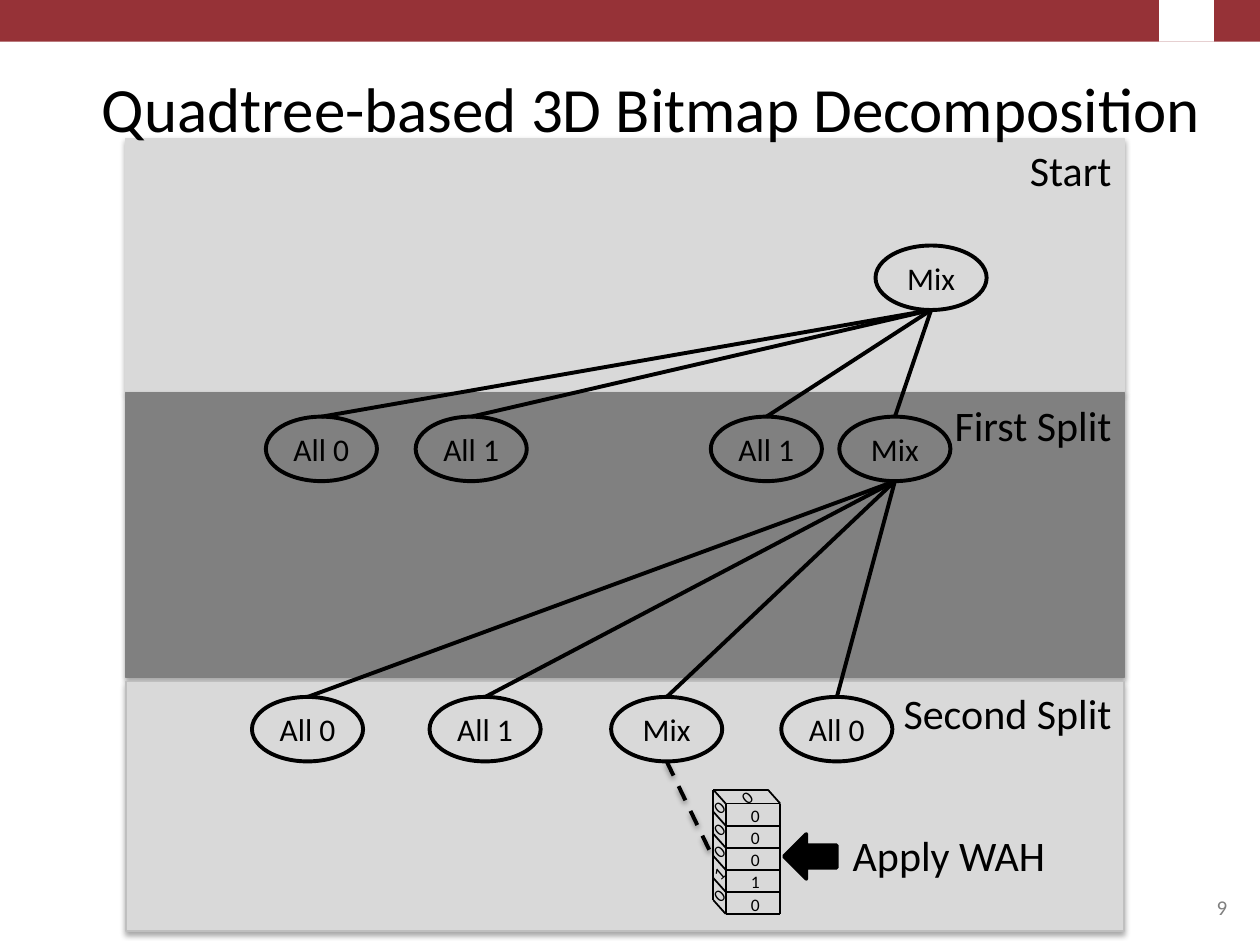
"""Build a slide showing the quadtree decomposition of a 3D bitmap."""
import lxml.etree
import pptx
import pptx.dml.color
import pptx.enum.dml
import pptx.enum.shapes
import pptx.enum.text
import pptx.oxml.ns
import pptx.util

Cm, Pt = pptx.util.Cm, pptx.util.Pt
Shape = pptx.enum.shapes.MSO_SHAPE
Align = pptx.enum.text.PP_ALIGN
Anchor = pptx.enum.text.MSO_ANCHOR
qn = pptx.oxml.ns.qn

NODE_WIDTH, NODE_HEIGHT = 2.24, 1.3
PANEL_LEFT, PANEL_WIDTH = 2.54, 20.12
LEVELS = [
    ("Start", 2.79, 5.11, "D9D9D9", "D9D9D9", 4.95, [(17.65, "Mix")]),
    ("First Split", 7.92, 5.74, "808080", "808080", 8.4,
     [(5.36, "All 0"), (8.38, "All 1"), (14.33, "All 1"), (16.92, "Mix")]),
    ("Second Split", 13.74, 5.03, "D9D9D9", "BFBFBF", 14.05,
     [(5.08, "All 0"), (8.66, "All 1"), (12.32, "Mix"), (15.75, "All 0")]),
]
BITS = "00010"


def color(value):
    return pptx.dml.color.RGBColor.from_string(value)


class Painter:
    def __init__(self, page, font="Calibri", ink="000000"):
        self.page, self.font, self.ink = page, font, ink

    def label(self, frame, text, size, align, anchor, ink=None):
        frame.vertical_anchor = anchor
        para = frame.paragraphs[0]
        para.text = text
        para.alignment = align
        para.font.name = self.font
        para.font.size = Pt(size)
        para.font.color.rgb = color(ink or self.ink)

    def title(self, text, left, top, width, height):
        title = self.page.shapes.title
        title.left, title.top = Cm(left), Cm(top)
        title.width, title.height = Cm(width), Cm(height)
        self.label(title.text_frame, text, 36, Align.CENTER, Anchor.BOTTOM)
        title.element.getparent().append(title.element)

    def text(self, text, left, top, width, height, size, align=Align.LEFT,
             anchor=Anchor.TOP, ink=None, rotation=0):
        box = self.page.shapes.add_textbox(Cm(left), Cm(top), Cm(width), Cm(height))
        box.rotation = rotation
        box.text_frame.word_wrap = False
        self.label(box.text_frame, text, size, align, anchor, ink)

    def shape(self, kind, left, top, width, height, fill=None, line=None, weight=0.75):
        shape = self.page.shapes.add_shape(kind, Cm(left), Cm(top), Cm(width), Cm(height))
        if fill:
            shape.fill.solid()
            shape.fill.fore_color.rgb = color(fill)
        else:
            shape.fill.background()
        if line:
            shape.line.color.rgb = color(line)
            shape.line.width = Pt(weight)
        else:
            shape.line.fill.background()
        shape.shadow.inherit = False
        return shape

    def shadow(self, effects, opacity):
        outer = lxml.etree.SubElement(effects, qn("a:outerShdw"), blurRad=str(Pt(3.1)),
                                      dist=str(Pt(1.8)), dir="5400000", rotWithShape="0")
        tint = lxml.etree.SubElement(outer, qn("a:srgbClr"), val="000000")
        lxml.etree.SubElement(tint, qn("a:alpha"), val=str(opacity * 1000))

    def panel(self, text, top, height, fill, line):
        panel = self.shape(Shape.RECTANGLE, PANEL_LEFT, top, PANEL_WIDTH, height, fill, line)
        self.shadow(panel.element.spPr.find(qn("a:effectLst")), 35)
        self.label(panel.text_frame, text, 24, Align.RIGHT, Anchor.TOP)

    def node(self, text, left, top):
        node = self.shape(Shape.OVAL, left, top, NODE_WIDTH, NODE_HEIGHT, None, self.ink, 2.25)
        node.text_frame.word_wrap = False
        self.label(node.text_frame, text, 18, Align.CENTER, Anchor.MIDDLE)

    def line(self, start, end, weight=2.25, dashed=False):
        line = self.page.shapes.add_connector(
            pptx.enum.shapes.MSO_CONNECTOR.STRAIGHT, *map(Cm, start + end))
        line.line.color.rgb = color(self.ink)
        line.line.width = Pt(weight)
        if dashed:
            line.line.dash_style = pptx.enum.dml.MSO_LINE.DASH
        effects = lxml.etree.SubElement(line.element.spPr, qn("a:effectLst"))
        if dashed:
            self.shadow(effects, 38)

    def tree(self):
        parent = None
        for label, top, height, fill, line, node_top, nodes in LEVELS:
            self.panel(label, top, height, fill, line)
            for left, text in nodes:
                if parent:
                    self.line(parent, (left + NODE_WIDTH / 2, node_top))
            for left, text in nodes:
                self.node(text, left, node_top)
                if text == "Mix":
                    mixed = (left + NODE_WIDTH / 2, node_top + NODE_HEIGHT)
            parent = mixed
        self.line(parent, (14.33, 17.2), dashed=True)

    def bit(self, text, left, top, rotation=0):
        self.text(text, left, top, 0.69, 0.69, 10, Align.CENTER, Anchor.MIDDLE,
                  rotation=rotation)

    def bitmap(self, left, top, width=1.1, step=0.445, dx=0.25, dy=0.28):
        right, bottom = left + width, top + len(BITS) * step
        for row in range(len(BITS) + 1):
            y = top + row * step
            self.line((left, y), (right, y), 1)
            self.line((left, y), (left - dx, y - dy), 1)
        for x, shift in ((left, 0), (right, 0), (left - dx, dy)):
            self.line((x, top - shift), (x, bottom - shift), 1)
        self.line((left - dx, top - dy), (right - dx, top - dy), 1)
        self.line((right, top), (right - dx, top - dy), 1)
        self.bit("0", left + 0.08, top - 0.48, 319.3)
        for row, value in enumerate(BITS):
            y = top + row * step
            self.bit(value, left - 0.48, y - 0.27, 319.3)
            self.bit(value, left + 0.25, y - 0.1)


def main():
    deck = pptx.Presentation()
    deck.slide_width, deck.slide_height = Cm(25.4), Cm(19.05)
    painter = Painter(deck.slides.add_slide(deck.slide_layouts[5]))
    painter.shape(Shape.RECTANGLE, 0, 0, 25.4, 0.84, "963237")
    painter.shape(Shape.RECTANGLE, 23.37, 0, 1.1, 0.84, "FFFFFF")
    painter.text("9", 18.21, 17.35, 6.78, 1.32, 12, Align.RIGHT, Anchor.BOTTOM, "808080")
    painter.tree()
    painter.bitmap(14.63, 16.2)
    painter.title("Quadtree-based 3D Bitmap Decomposition", 1.7, 0.84, 22.86, 2.21)
    painter.text("Apply WAH", 16.94, 16.59, 4.45, 1.27, 24)
    arrow = painter.shape(Shape.RIGHT_ARROW, 15.8, 16.81, 1.07, 0.91, "000000", "000000", 2)
    arrow.rotation = 180
    deck.save("out.pptx")


if __name__ == "__main__":
    main()
